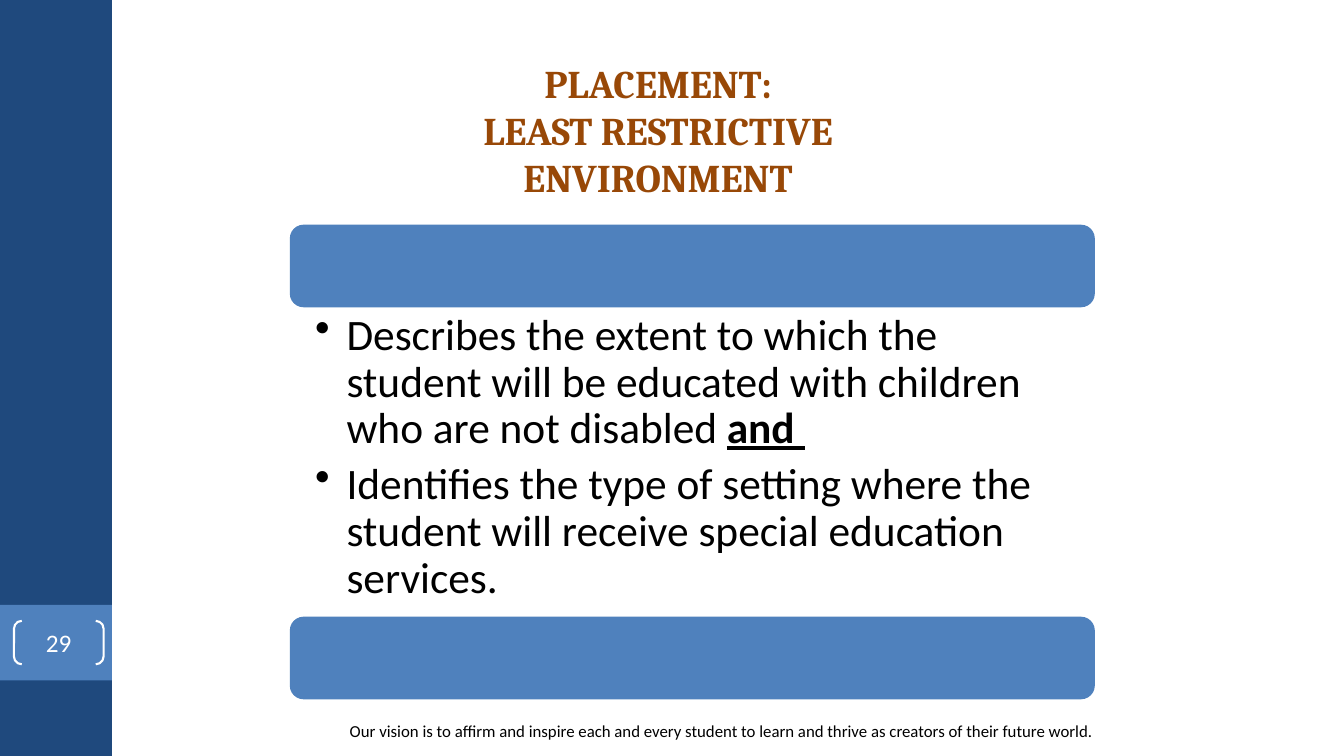
from dataclasses import dataclass

from lxml import etree
from pptx import Presentation
from pptx import util as u
from pptx.dml.color import RGBColor
from pptx.enum import shapes, text
from pptx.oxml import ns


@dataclass(frozen=True)
class Theme:
    navy: str = "1F497D"
    blue: str = "4F81BD"
    brown: str = "984807"
    black: str = "000000"
    white: str = "FFFFFF"
    heading_font: str = "Cambria"
    body_font: str = "Calibri"
    heading_size: int = 28
    body_size: int = 31
    number_size: int = 18
    footer_size: int = 12


class SlideBuilder:
    def __init__(self, slide, theme):
        self.slide = slide
        self.theme = theme

    def box(self, left, top, width, height):
        return [u.Pt(v) for v in (left, top, width, height)]

    def shape(self, kind, place, fill=None, line=None):
        sp = self.slide.shapes.add_shape(kind, *self.box(*place))
        sp.shadow.inherit = False
        if fill:
            sp.fill.solid()
            sp.fill.fore_color.rgb = RGBColor.from_string(fill)
        else:
            sp.fill.background()
        if line:
            sp.line.color.rgb = RGBColor.from_string(line)
            sp.line.width = u.Pt(1.5)
        else:
            sp.line.fill.background()
        return sp

    def style(self, p, size, color, font=None, bold=False):
        for r in p.runs:
            r.font.name = font or self.theme.body_font
            r.font.size = u.Pt(size)
            r.font.bold = bold
            r.font.color.rgb = RGBColor.from_string(color)

    def frame(self, place):
        tf = self.slide.shapes.add_textbox(*self.box(*place)).text_frame
        tf.word_wrap = True
        return tf

    def label(self, place, lines, size, color, font=None, bold=False):
        tf = self.frame(place)
        tf.text = "\n".join(lines)
        for p in tf.paragraphs:
            p.alignment = text.PP_ALIGN.CENTER
            self.style(p, size, color, font, bold)

    def page_number(self, place, number):
        sp = self.shape(shapes.MSO_SHAPE.DOUBLE_BRACKET, place, line=self.theme.white)
        sp.adjustments[0] = 0.18
        tf = sp.text_frame
        tf.margin_left = tf.margin_right = tf.margin_top = tf.margin_bottom = 0
        tf.vertical_anchor = text.MSO_ANCHOR.MIDDLE
        tf.text = number
        p = tf.paragraphs[0]
        p.alignment = text.PP_ALIGN.CENTER
        self.style(p, self.theme.number_size, self.theme.white)

    def bullets(self, place, items):
        tf = self.frame(place)
        tf.margin_left, tf.margin_right = u.Pt(18), u.Pt(22.5)
        tf.margin_top = tf.margin_bottom = u.Pt(4.3)
        tf.text = "\n".join(items)
        for p in tf.paragraphs:
            p.line_spacing = 0.9
            p.space_after = u.Pt(6)
            pPr = p._p.get_or_add_pPr()
            pPr.set("marL", str(u.Pt(22.5)))
            pPr.set("indent", str(-u.Pt(22.5)))
            etree.SubElement(pPr, ns.qn("a:buChar"), char="•")
            self.style(p, self.theme.body_size, self.theme.black)
        return tf

    def emphasis(self, p, words):
        r = p.add_run()
        r.text = words
        self.style(p, self.theme.body_size, self.theme.black)
        r.font.bold = r.font.underline = True


def main():
    prs = Presentation()
    prs.slide_width, prs.slide_height = u.Pt(960), u.Pt(540)
    theme = Theme()
    s = SlideBuilder(prs.slides.add_slide(prs.slide_layouts[6]), theme)
    kinds = shapes.MSO_SHAPE

    s.shape(kinds.RECTANGLE, (0, 0, 80, 540), theme.navy)
    s.shape(kinds.RECTANGLE, (0, 432, 80, 54), theme.blue)
    s.label((73.5, 511, 884, 29),
            ["Our vision is to affirm and inspire each and every student to learn "
             "and thrive as creators of their future world."],
            theme.footer_size, theme.black)
    s.page_number((10, 443.5, 64, 31), "29")
    s.label((242, 39, 456, 109), ["PLACEMENT:", "LEAST RESTRICTIVE ENVIRONMENT"],
            theme.heading_size, theme.brown, theme.heading_font, bold=True)

    left, width, bar_height = 207, 575, 59
    for top in (160.5, 440.5):
        s.shape(kinds.ROUNDED_RECTANGLE, (left, top, width, bar_height), theme.blue)
    tf = s.bullets((left, 219, width, 222), [
        "Describes the extent to which the student will be educated with children "
        "who are not disabled ",
        "Identifies the type of setting where the student will receive special "
        "education services.",
    ])
    s.emphasis(tf.paragraphs[0], "and ")
    prs.save("out.pptx")


if __name__ == "__main__":
    main()
